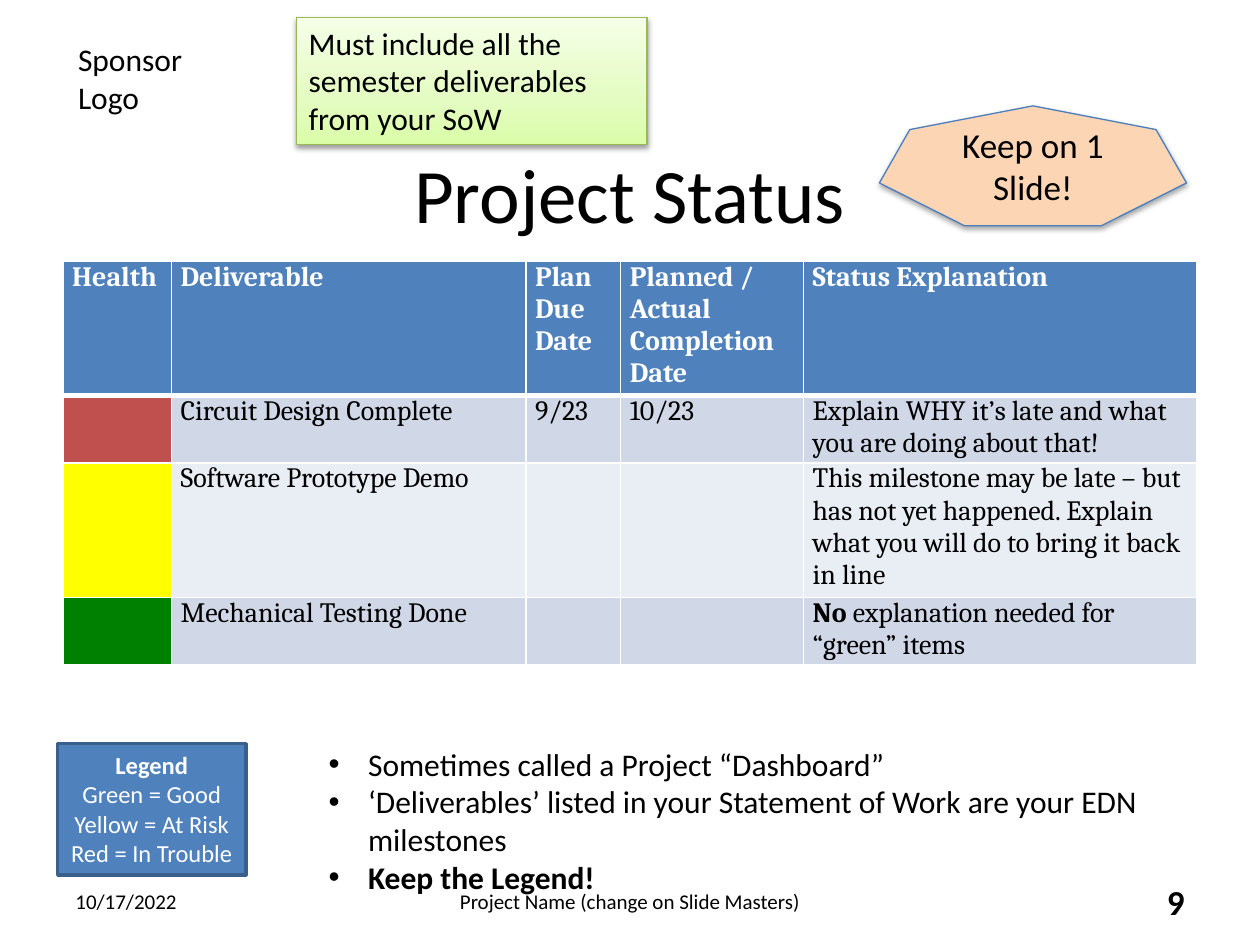
from lxml import etree
from pptx import Presentation
from pptx.dml.color import RGBColor
from pptx.enum.shapes import MSO_SHAPE
from pptx.enum.text import MSO_ANCHOR, PP_ALIGN
from pptx.oxml import parse_xml
from pptx.oxml.ns import nsdecls, qn
from pptx.util import Pt

RECT, HEPT = MSO_SHAPE.RECTANGLE, MSO_SHAPE.HEPTAGON
TOP, MID = MSO_ANCHOR.TOP, MSO_ANCHOR.MIDDLE
LEFT, MIDST, RIGHT = PP_ALIGN.LEFT, PP_ALIGN.CENTER, PP_ALIGN.RIGHT

BLUE, WHITE, BLACK = "4F81BD", "FFFFFF", "000000"
BANDS = ["D0D8E8", "E9EDF4"]
HEALTH = ["C0504D", "FFFF00", "008000"]
STOPS = [(0, "DAFDA7"), (35, "E4FCC2"), (100, "F5FFE7")]
COLS = [62, 202.5, 54.25, 104.5, 224.75]
TALL = [76.25, 38.25, 77, 38.25]
HEAD = [
    ["Health"],
    ["Deliverable"],
    ["Plan", "Due", "Date"],
    ["Planned / Actual", "Completion", "Date"],
    ["Status Explanation"],
]
ROWS = [
    ["", "Circuit Design Complete", "9/23", "10/23",
     "Explain WHY it’s late and what you are doing about that!"],
    ["", "Software Prototype Demo", "", "",
     "This milestone may be late – but has not yet happened. "
     "Explain what you will do to bring it back in line"],
    ["", "Mechanical Testing Done", "", "",
     "**No** explanation needed for “green” items"],
]
LEGEND = ["**Legend**", "Green = Good", "Yellow = At Risk", "Red = In Trouble"]
NOTES = [
    "Sometimes called a Project “Dashboard”",
    "‘Deliverables’ listed in your Statement of Work are your EDN milestones",
    "**Keep the Legend!**",
]


def color(code):
    return RGBColor.from_string(code)


def write(frame, lines, size=18, face="Calibri", ink=BLACK, bold=False,
          align=LEFT, bullet=False):
    for i, line in enumerate(lines):
        para = frame.add_paragraph() if i else frame.paragraphs[0]
        para.alignment = align
        if bullet:
            props = para._p.get_or_add_pPr()
            props.set("marL", str(Pt(22.5)))
            props.set("indent", str(-Pt(22.5)))
            etree.SubElement(props, qn("a:buFont")).set("typeface", "Arial")
            etree.SubElement(props, qn("a:buChar")).set("char", "•")
        para.font.size = Pt(size)
        for j, part in enumerate(line.split("**")):
            for k, words in enumerate(part.split("\n")):
                if k:
                    para.add_line_break()
                if words:
                    run = para.add_run()
                    run.text = words
                    font = run.font
                    font.name, font.size = face, Pt(size)
                    font.bold = bold or j % 2 == 1
                    font.color.rgb = color(ink)


def label(slide, box, lines, anchor=TOP, **form):
    frame = slide.shapes.add_textbox(*map(Pt, box)).text_frame
    frame.word_wrap = True
    frame.vertical_anchor = anchor
    write(frame, lines, **form)


def panel(slide, box, kind, fill, line, width, lines, anchor=TOP, wrap=True,
          **form):
    shape = slide.shapes.add_shape(kind, *map(Pt, box))
    shape.shadow.inherit = False
    shape.fill.solid()
    shape.fill.fore_color.rgb = color(fill)
    shape.line.color.rgb = color(line)
    shape.line.width = Pt(width)
    frame = shape.text_frame
    frame.word_wrap = wrap
    frame.vertical_anchor = anchor
    write(frame, lines, **form)
    return shape


def shade(shape, dist, alpha):
    effect = shape._element.spPr.find(qn("a:effectLst"))
    effect.append(parse_xml(
        f'<a:outerShdw {nsdecls("a")} blurRad="{Pt(3.1)}" dist="{Pt(dist)}" '
        f'dir="5400000" rotWithShape="0"><a:srgbClr val="{BLACK}">'
        f'<a:alpha val="{alpha * 1000}"/></a:srgbClr></a:outerShdw>'))


def blend(shape, stops):
    marks = "".join(
        f'<a:gs pos="{pos * 1000}"><a:srgbClr val="{code}"/></a:gs>'
        for pos, code in stops)
    props = shape._element.spPr
    props.replace(props.find(qn("a:solidFill")), parse_xml(
        f'<a:gradFill {nsdecls("a")} rotWithShape="1"><a:gsLst>{marks}'
        f'</a:gsLst><a:lin ang="16200000" scaled="0"/></a:gradFill>'))


def style(cell, fill, base):
    cell.margin_left = cell.margin_right = Pt(5.25)
    cell.margin_top = cell.margin_bottom = 0
    props = cell._tc.get_or_add_tcPr()
    for side, width in (("L", 1), ("R", 1), ("T", 1), ("B", base)):
        props.append(parse_xml(
            f'<a:ln{side} {nsdecls("a")} w="{Pt(width)}"><a:solidFill>'
            f'<a:srgbClr val="{WHITE}"/></a:solidFill></a:ln{side}>'))
    cell.fill.solid()
    cell.fill.fore_color.rgb = color(fill)


def status(slide, box):
    table = slide.shapes.add_table(
        len(TALL), len(COLS), *map(Pt, box)).table
    for col, width in zip(table.columns, COLS):
        col.width = Pt(width)
    for row, height in zip(table.rows, TALL):
        row.height = Pt(height)
    for c, lines in enumerate(HEAD):
        cell = table.cell(0, c)
        style(cell, BLUE, 3)
        write(cell.text_frame, lines, size=16, face="Cambria", ink=WHITE,
              bold=True)
    for r, row in enumerate(ROWS):
        for c, words in enumerate(row):
            cell = table.cell(r + 1, c)
            style(cell, BANDS[r % 2] if c else HEALTH[r], 1)
            write(cell.text_frame, [words], size=16, face="Cambria")


def footer(slide, box):
    left, top, width, height = box
    side, mid = 168, 228
    label(slide, (left, top, side, height), ["10/17/2022"], MID, size=12)
    label(slide, (left + (width - mid) / 2, top, mid, height),
          ["Project Name (change on Slide Masters)"], MID, size=12,
          align=MIDST)
    label(slide, (left + width - side, top, side, height), ["9"], MID,
          size=20, bold=True, align=RIGHT)


def main():
    deck = Presentation()
    deck.slide_width, deck.slide_height = Pt(720), Pt(540)
    slide = deck.slides.add_slide(deck.slide_layouts[6])
    label(slide, (37.5, 19.5, 110, 51), ["Sponsor\nLogo"])
    status(slide, (36, 149.25, 648, sum(TALL)))
    label(slide, (36, 80.75, 648, 59), ["Project Status"], MID, size=44,
          align=MIDST)
    footer(slide, (36, 500.5, 648, 28.75))
    panel(slide, (33, 425, 107.5, 75), RECT, BLUE, "3A5F8C", 2, LEGEND,
          wrap=False, size=14, ink=WHITE, align=MIDST)
    label(slide, (180.75, 422, 528, 94.5), NOTES, bullet=True)
    badge = panel(slide, (502.5, 60.5, 175.5, 68.5), HEPT, "FCD5B5",
                  "4B7EBC", 0.75, ["Keep on 1 Slide!"], MID, size=20,
                  align=MIDST)
    shade(badge, 1.8, 35)
    tip = panel(slide, (169.25, 10, 200.5, 72.75), RECT, STOPS[0][1],
                "98B955", 0.75,
                ["Must include all the semester deliverables from your SoW"])
    blend(tip, STOPS)
    shade(tip, 1.6, 38)
    deck.save("out.pptx")


if __name__ == "__main__":
    main()
